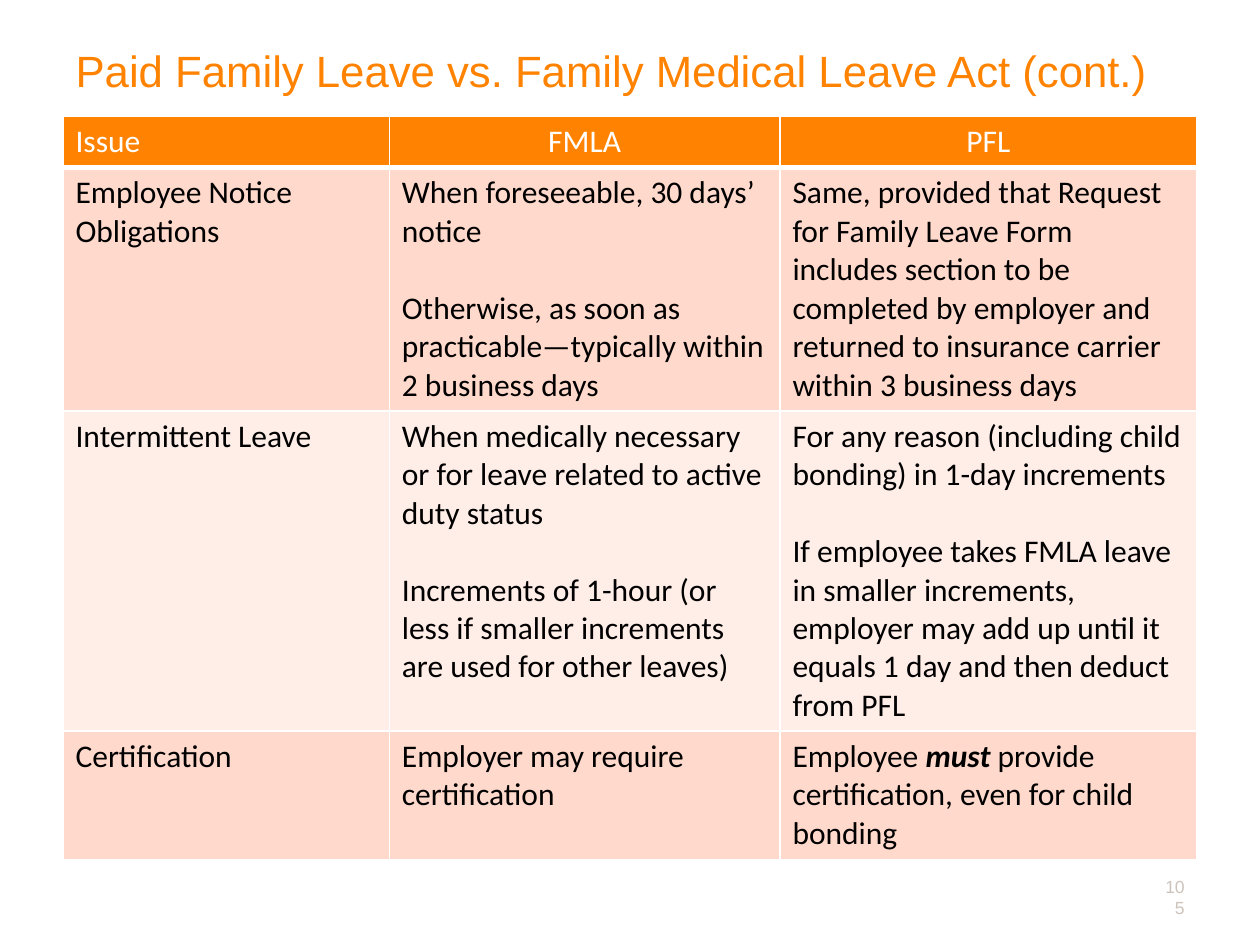
from lxml import etree
from pptx import Presentation
from pptx.dml.color import RGBColor
from pptx.enum.text import MSO_ANCHOR, PP_ALIGN
from pptx.oxml.ns import qn
from pptx.util import Inches, Pt

TOP, MIDDLE = MSO_ANCHOR.TOP, MSO_ANCHOR.MIDDLE
LEFT, CENTER, RIGHT = PP_ALIGN.LEFT, PP_ALIGN.CENTER, PP_ALIGN.RIGHT
TITLE_ONLY = 5

COLORS = {
    "orange": "FF8300",
    "band_dark": "FFD9CC",
    "band_light": "FFEDE7",
    "white": "FFFFFF",
    "black": "000000",
    "number": "CDC3BB",
}

# Each cell is a list of paragraphs; *...* marks bold italic words
ROWS = [
    [["Issue"], ["FMLA"], ["PFL"]],
    [
        ["Employee Notice Obligations"],
        ["When foreseeable, 30 days’ notice",
         "Otherwise, as soon as practicable—typically within 2 business days"],
        ["Same, provided that Request for Family Leave Form includes section to be "
         "completed by employer and returned to insurance carrier within 3 business days"],
    ],
    [
        ["Intermittent Leave"],
        ["When medically necessary or for leave related to active duty status",
         "Increments of 1-hour (or less if smaller increments are used for other leaves)"],
        ["For any reason (including child bonding) in 1-day increments",
         "If employee takes FMLA leave in smaller increments, employer may add up "
         "until it equals 1 day and then deduct from PFL"],
    ],
    [
        ["Certification"],
        ["Employer may require certification"],
        ["Employee *must* provide certification, even for child bonding"],
    ],
]
COLUMN_WIDTHS = [2.59, 3.1, 3.31]
ROW_HEIGHTS = [0.41, 1.93, 2.54, 1.02]


def style(paragraph, font_name, size, color, align=LEFT):
    paragraph.alignment = align
    paragraph.font.name = font_name
    paragraph.font.size = Pt(size)
    paragraph.font.bold = False
    paragraph.font.color.rgb = RGBColor.from_string(COLORS[color])


def add_borders(cell, bottom_width):
    properties = cell._tc.get_or_add_tcPr()
    for side, width in (("L", 1), ("R", 1), ("T", 1), ("B", bottom_width)):
        line = etree.SubElement(properties, qn(f"a:ln{side}"), w=str(Pt(width)))
        fill = etree.SubElement(line, qn("a:solidFill"))
        etree.SubElement(fill, qn("a:srgbClr"), val=COLORS["white"])


prs = Presentation()
prs.slide_width, prs.slide_height = Inches(10), Inches(7.5)
slide = prs.slides.add_slide(prs.slide_layouts[TITLE_ONLY])

# Title
title = slide.shapes.title
title.left, title.top = Inches(0.5), Inches(0.3)
title.width, title.height = Inches(9), Inches(1.25)
title.text_frame.text = "Paid Family Leave vs. Family Medical Leave Act (cont.)"
title.text_frame.vertical_anchor = TOP
style(title.text_frame.paragraphs[0], "Arial", 25, "orange")

# Comparison table
comparison = slide.shapes.add_table(
    len(ROWS), len(COLUMN_WIDTHS), Inches(0.5), Inches(0.92),
    Inches(sum(COLUMN_WIDTHS)), Inches(sum(ROW_HEIGHTS))).table
for column, width in zip(comparison.columns, COLUMN_WIDTHS):
    column.width = Inches(width)
for row, height in zip(comparison.rows, ROW_HEIGHTS):
    row.height = Inches(height)

for r, issue in enumerate(ROWS):
    is_header = r == 0
    band = "orange" if is_header else "band_dark" if r % 2 else "band_light"
    for c, statements in enumerate(issue):
        cell = comparison.cell(r, c)
        add_borders(cell, 3 if is_header else 1)
        cell.fill.solid()
        cell.fill.fore_color.rgb = RGBColor.from_string(COLORS[band])
        for i, statement in enumerate(statements):
            frame = cell.text_frame
            paragraph = frame.add_paragraph() if i else frame.paragraphs[0]
            if i:
                paragraph.space_before = Pt(22)
            style(paragraph, "Calibri", 18, "white" if is_header else "black",
                  CENTER if is_header and c else LEFT)
            for part, words in enumerate(statement.split("*")):
                run = paragraph.add_run()
                run.text = words
                if part % 2:
                    run.font.bold = run.font.italic = True

# Slide number
number = slide.shapes.add_textbox(
    Inches(9.08), Inches(6.92), Inches(0.42), Inches(0.4)).text_frame
number.word_wrap = True
number.vertical_anchor = MIDDLE
number.text = "105"
style(number.paragraphs[0], "Arial", 10, "number", RIGHT)

prs.save("out.pptx")
